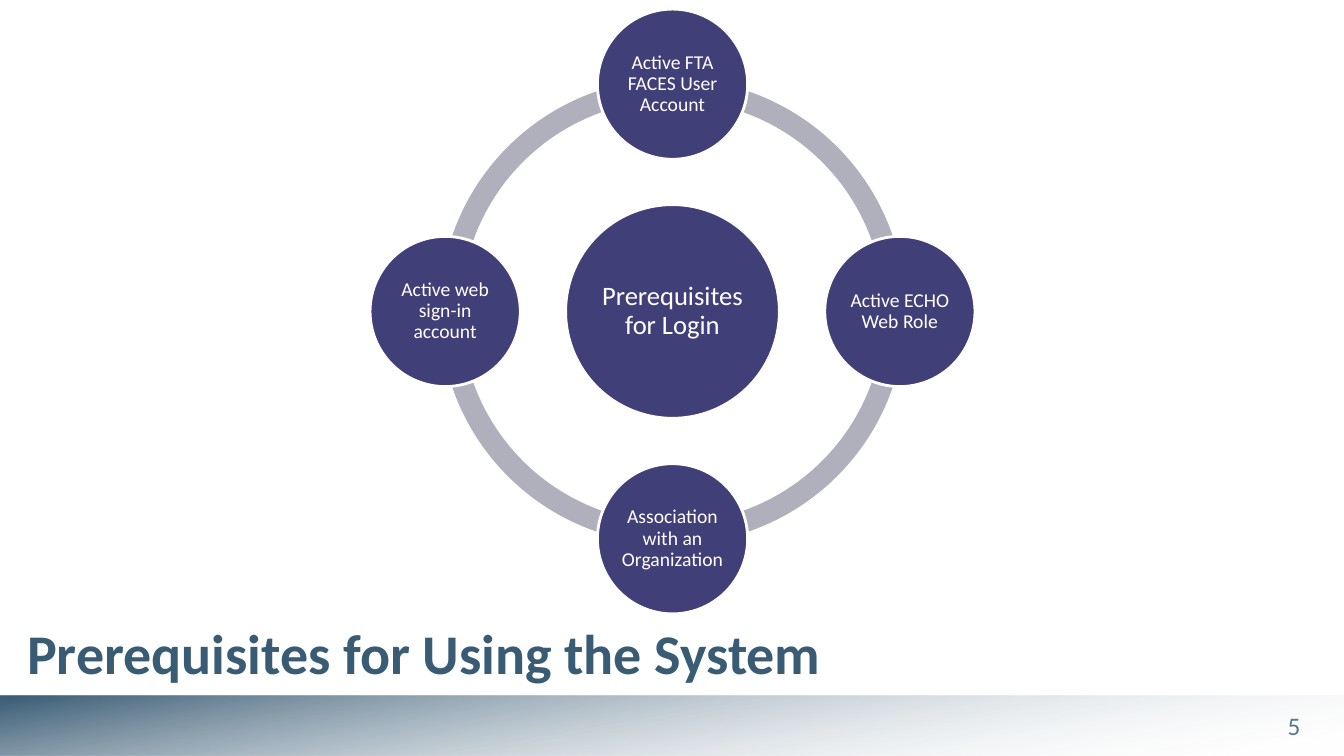
from lxml import etree
from pptx import Presentation
from pptx import util as u
from pptx.dml.color import RGBColor
from pptx.enum import shapes, text
from pptx.oxml.ns import qn

FONT = "Calibri"
NAVY, RING, SLATE, WHITE = "413F77", "B0B0BD", "395B74", "FFFFFF"
CENTER_X, CENTER_Y = 6.67, 3.09
RING_SIZE, HUB_SIZE, NODE_SIZE, ORBIT = 4.62, 2.12, 1.49, 2.255

# Label and direction from the hub, clockwise from the top
NODES = [
    ("Active FTA FACES User Account", 0, -1),
    ("Active ECHO Web Role", 1, 0),
    ("Association with an Organization", 0, 1),
    ("Active web sign-in account", -1, 0),
]


def rgb(value):
    return RGBColor.from_string(value)


def set_text(sp, content, size, color, inset, bold=False, spacing=None,
             align=text.PP_ALIGN.CENTER, anchor=text.MSO_ANCHOR.MIDDLE):
    tf = sp.text_frame
    frame = {"word_wrap": True, "vertical_anchor": anchor,
             "margin_left": u.Inches(inset[0]), "margin_right": u.Inches(inset[0]),
             "margin_top": u.Inches(inset[1]), "margin_bottom": u.Inches(inset[1])}
    for name, value in frame.items():
        setattr(tf, name, value)
    p = tf.paragraphs[0]
    p.alignment = align
    p.line_spacing = spacing
    r = p.add_run()
    r.text = content
    for name, value in {"name": FONT, "size": u.Pt(size), "bold": bold}.items():
        setattr(r.font, name, value)
    r.font.color.rgb = rgb(color)


def add_text(s, box, content, size, color, inset, **options):
    sp = s.shapes.add_textbox(*map(u.Inches, box))
    set_text(sp, content, size, color, inset, **options)


def add_plain_shape(s, kind, box):
    sp = s.shapes.add_shape(kind, *map(u.Inches, box))
    sp.shadow.inherit = False
    sp.line.fill.background()
    return sp


def centered_box(x, y, size):
    return x - size / 2, y - size / 2, size, size


def add_footer_band(s):
    sp = add_plain_shape(s, shapes.MSO_SHAPE.RECTANGLE, (0, 6.9, 13.33, 0.6))
    sp.fill.gradient()
    sp.fill.gradient_angle = 280
    stops = sp.fill.gradient_stops
    for stop, position, color in zip(stops, (0, 0.99), (SLATE, WHITE)):
        stop.position = position
        stop.color.rgb = rgb(color)
    # The white end fades out completely
    last_color = list(sp.fill._fill._gradFill.iter(qn("a:srgbClr")))[-1]
    etree.SubElement(last_color, qn("a:alpha")).set("val", "0")


def add_ring_arc(s, start, end):
    sp = add_plain_shape(s, shapes.MSO_SHAPE.BLOCK_ARC,
                         centered_box(CENTER_X, CENTER_Y, RING_SIZE))
    sp.fill.solid()
    sp.fill.fore_color.rgb = rgb(RING)
    for i, value in enumerate((start, end, 0.046)):
        sp.adjustments[i] = value


def add_circle(s, x, y, diameter, label, size, inset):
    sp = add_plain_shape(s, shapes.MSO_SHAPE.OVAL, centered_box(x, y, diameter))
    sp.fill.solid()
    sp.fill.fore_color.rgb = rgb(NAVY)
    sp.line.color.rgb = rgb(WHITE)
    sp.line.width = u.Pt(2)
    set_text(sp, label, size, WHITE, (inset, inset), spacing=0.9)


def main():
    prs = Presentation()
    prs.slide_width, prs.slide_height = u.Inches(13.33), u.Inches(7.5)
    s = prs.slides.add_slide(prs.slide_layouts[6])

    # Footer and title
    add_footer_band(s)
    add_text(s, (12.33, 7.01, 1.01, 0.38), "5", 18, "577795", (0.07, 0.04),
             anchor=text.MSO_ANCHOR.TOP)
    add_text(s, (0.17, 5.97, 10.5, 1), "Prerequisites for Using the System",
             40, SLATE, (0.1, 0.05), bold=True, align=text.PP_ALIGN.LEFT)

    # Ring of four quarter arcs; 54 adjustment units make 90 degrees
    for quarter in range(4):
        add_ring_arc(s, quarter * 54, (quarter + 1) % 4 * 54)

    # Hub and the prerequisites around it
    add_circle(s, CENTER_X, CENTER_Y, HUB_SIZE, "Prerequisites for Login", 19, 0.03)
    for label, dx, dy in NODES:
        add_circle(s, CENTER_X + dx * ORBIT, CENTER_Y + dy * ORBIT,
                   NODE_SIZE, label, 14, 0.02)

    prs.save("out.pptx")


if __name__ == "__main__":
    main()
